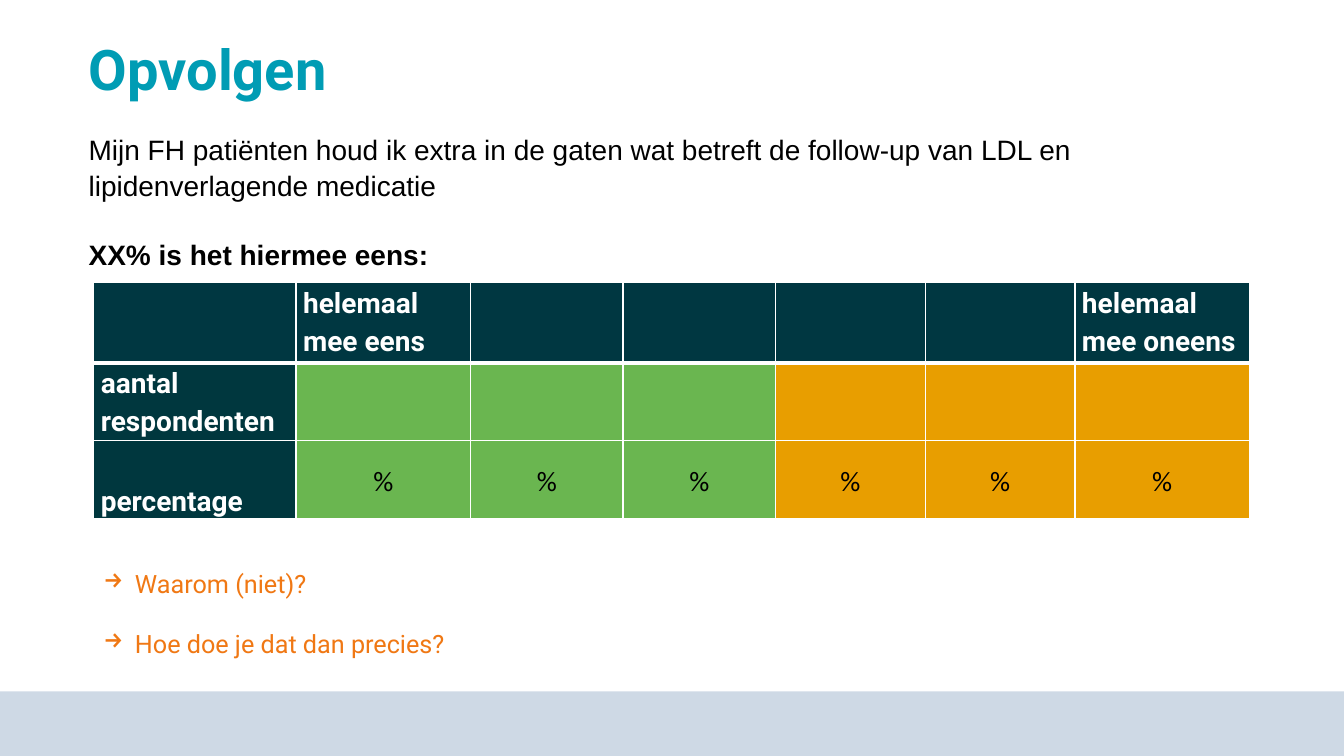
from lxml.etree import SubElement
from pptx import Presentation
from pptx.dml.color import RGBColor
from pptx.enum.shapes import MSO_SHAPE
from pptx.enum.text import MSO_ANCHOR, MSO_AUTO_SIZE, PP_ALIGN
from pptx.oxml.ns import qn
from pptx.util import Inches, Pt

WHITE = RGBColor(0xFF, 0xFF, 0xFF)
BLACK = RGBColor(0x00, 0x00, 0x00)
TEAL = RGBColor(0x00, 0x9C, 0xB4)
DARK = RGBColor(0x00, 0x37, 0x41)
DARK_SIDE = RGBColor(0x00, 0x37, 0x3E)
GREEN = RGBColor(0x6A, 0xB6, 0x50)
AMBER = RGBColor(0xE8, 0x9E, 0x00)
ORANGE = RGBColor(0xF0, 0x78, 0x14)
BAND = RGBColor(0xCE, 0xD9, 0xE5)

WIDTH, HEIGHT = Inches(13.33), Inches(7.5)
COLUMN_SHARES = [17.5, 15.1, 13.2, 13.2, 12.95, 12.95, 15.1]
ROW_SHARES = [34.2, 32.9, 32.9]
ROWS = [
    ["", "helemaal mee eens", "", "", "", "", "helemaal mee oneens"],
    ["aantal\nrespondenten"] + [""] * 6,
    ["percentage"] + ["%"] * 6,
]


def share(total, percent):
    return round(total * percent / 100)


def area(left, top, width, height):
    """Box from percentages of the slide's width and height."""
    return (share(WIDTH, left), share(HEIGHT, top),
            share(WIDTH, width), share(HEIGHT, height))


def style(p, name, size, color, bold=False):
    for r in p.runs:
        r.font.name, r.font.size, r.font.bold = name, Pt(size), bold
        r.font.color.rgb = color


def add_band(s, box):
    band = s.shapes.add_shape(MSO_SHAPE.RECTANGLE, *box)
    band.shadow.inherit = False
    band.fill.solid()
    band.fill.fore_color.rgb = BAND
    band.line.fill.background()


def set_title(s, box):
    title = s.shapes.title
    title.left, title.top, title.width, title.height = box
    tf = title.text_frame
    tf.text = "Opvolgen"
    tf.auto_size = MSO_AUTO_SIZE.NONE
    tf.vertical_anchor = MSO_ANCHOR.MIDDLE
    p = tf.paragraphs[0]
    p.alignment, p.line_spacing = PP_ALIGN.LEFT, 0.9
    style(p, "Roboto", 40, TEAL, True)


def add_text(s, box, lines, gap):
    tf = s.shapes.add_textbox(*box).text_frame
    tf.word_wrap = True
    tf.text = "\n".join(lines)
    for p in tf.paragraphs[1:]:
        p.space_before = Pt(gap)
    return tf.paragraphs


def add_statement(s, box):
    statement, result = add_text(s, box, [
        "Mijn FH patiënten houd ik extra in de gaten wat betreft de follow-up "
        "van LDL en lipidenverlagende medicatie",
        "XX% is het hiermee eens:"], 24)
    for p in (statement, result):
        p.line_spacing = 1.05
    style(statement, "Arial", 20, BLACK)
    style(result, "Arial", 20, BLACK, True)


def add_questions(s, box):
    lines = ["Waarom (niet)?", "Hoe doe je dat dan precies?"]
    for p in add_text(s, box, lines, 21):
        pPr = p._p.get_or_add_pPr()
        pPr.set("marL", str(Inches(0.31)))
        pPr.set("indent", str(-Inches(0.31)))
        SubElement(pPr, qn("a:buChar"), char="→")
        style(p, "Roboto", 18, ORANGE)


def set_borders(cell, top, bottom):
    tcPr = cell._tc.get_or_add_tcPr()
    for side, width in (("L", 1), ("R", 1), ("T", top), ("B", bottom)):
        ln = SubElement(tcPr, qn(f"a:ln{side}"), w=str(Pt(width)))
        fill = SubElement(ln, qn("a:solidFill"))
        SubElement(fill, qn("a:srgbClr"), val=str(WHITE))


def cell_color(row, col):
    if row == 0:
        return DARK
    if col == 0:
        return DARK_SIDE
    return GREEN if col <= 3 else AMBER


def fill_cell(cell, row, col, text):
    set_borders(cell, 3 if row == 1 else 1, 3 if row == 0 else 1)
    cell.fill.solid()
    cell.fill.fore_color.rgb = cell_color(row, col)
    cell.margin_left = cell.margin_right = Inches(0.07)
    cell.margin_top = cell.margin_bottom = 0
    is_label = row == 0 or col == 0
    if not is_label:
        cell.vertical_anchor = MSO_ANCHOR.MIDDLE
    elif row == 2:
        cell.vertical_anchor = MSO_ANCHOR.BOTTOM
    cell.text_frame.text = text
    for p in cell.text_frame.paragraphs:
        p.line_spacing = 1.15
        if is_label:
            style(p, "Roboto", 20, WHITE, True)
        else:
            p.alignment = PP_ALIGN.CENTER
            style(p, "Calibri", 20, BLACK)


def add_answers(s, box):
    table = s.shapes.add_table(len(ROWS), len(COLUMN_SHARES), *box).table
    table.horz_banding = False
    for column, percent in zip(table.columns, COLUMN_SHARES):
        column.width = share(box[2], percent)
    for row, percent in zip(table.rows, ROW_SHARES):
        row.height = share(box[3], percent)
    for i, texts in enumerate(ROWS):
        for j, text in enumerate(texts):
            fill_cell(table.cell(i, j), i, j, text)


def build_slide(prs):
    s = prs.slides.add_slide(prs.slide_layouts[5])
    # Footer band and title
    add_band(s, area(0, 91.45, 100, 8.55))
    set_title(s, area(5.85, 4.8, 80.1, 9.5))
    # Statement, answers and follow-up questions
    add_statement(s, area(5.85, 16.7, 82.15, 19.5))
    add_answers(s, area(6.98, 37.35, 86, 31.2))
    add_questions(s, area(6.98, 74.55, 82.65, 13.5))


def main():
    prs = Presentation()
    prs.slide_width, prs.slide_height = WIDTH, HEIGHT
    build_slide(prs)
    prs.save("out.pptx")


if __name__ == "__main__":
    main()
